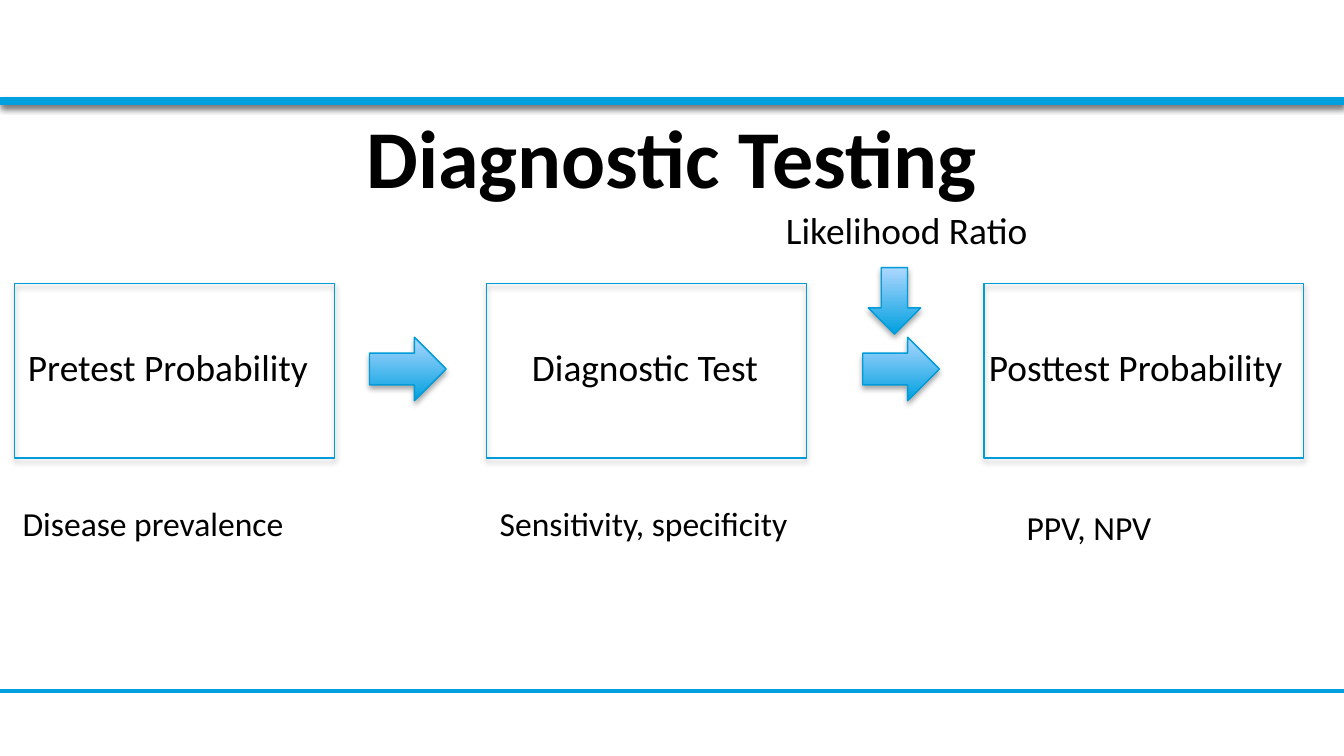
from lxml.etree import SubElement
from pptx import Presentation
from pptx.dml.color import RGBColor
from pptx.enum.shapes import MSO_CONNECTOR, MSO_SHAPE
from pptx.enum.text import MSO_ANCHOR, PP_ALIGN
from pptx.oxml.ns import qn
from pptx.util import Inches, Pt

BLACK = RGBColor(0, 0, 0)
WHITE = RGBColor(255, 255, 255)
BLUE = RGBColor(0x00, 0xA0, 0xDF)
EDGE = RGBColor(0x00, 0x9C, 0xDA)
PALE = RGBColor(0xAD, 0xD7, 0xFF)

deck = Presentation()
deck.slide_width, deck.slide_height = Inches(10), Inches(5.625)
slide = deck.slides.add_slide(deck.slide_layouts[6])
shapes = slide.shapes
col, row = deck.slide_width / 100, deck.slide_height / 100


def shade(shape, alpha, blur, drop):
    effect = SubElement(shape._element.spPr, qn("a:effectLst"))
    if alpha:
        cast = SubElement(effect, qn("a:outerShdw"), blurRad=str(Pt(blur)),
                          dist=str(Pt(drop)), dir="5400000", rotWithShape="0")
        tone = SubElement(cast, qn("a:srgbClr"), val=str(BLACK))
        SubElement(tone, qn("a:alpha"), val=str(alpha * 1000))


def write(text, x, y, w, h, size):
    label = shapes.add_textbox(int(x * col), int(y * row), int(w * col), int(h * row))
    frame = label.text_frame
    frame.word_wrap = True
    frame.text = text
    para = frame.paragraphs[0]
    para.font.name = "Calibri"
    para.font.size = Pt(size)
    para.font.color.rgb = BLACK
    return frame


band = shapes.add_shape(MSO_SHAPE.RECTANGLE, 0, 0, int(100 * col), int(13.69 * row))
band.fill.solid()
band.fill.fore_color.rgb = WHITE
band.line.fill.background()
shade(band, 35, 3.1, 1.8)

for y, width, alpha in [(91.38, 2, 0), (13.4, 4.5, 38)]:
    rule = shapes.add_connector(MSO_CONNECTOR.STRAIGHT, 0, int(y * row),
                                int(100 * col), int(y * row))
    rule.line.color.rgb = BLUE
    rule.line.width = Pt(width)
    shade(rule, alpha, 3.1, 1.6)

title = write("Diagnostic Testing", 5, 12.27, 90, 16.71, 44)
title.vertical_anchor = MSO_ANCHOR.MIDDLE
title.paragraphs[0].alignment = PP_ALIGN.CENTER
title.paragraphs[0].font.bold = True

for x in (1.1, 36.2, 73.2):
    box = shapes.add_shape(MSO_SHAPE.RECTANGLE, int(x * col), int(37.51 * row),
                           int(23.8 * col), int(23.11 * row))
    box.fill.background()
    box.line.color.rgb = EDGE
    box.line.width = Pt(0.75)
    shade(box, 35, 3.1, 1.8)

for kind, x, y, w, h in [
    (MSO_SHAPE.RIGHT_ARROW, 27.5, 44.62, 5.7, 8.4),
    (MSO_SHAPE.RIGHT_ARROW, 64.2, 44.62, 5.7, 8.4),
    (MSO_SHAPE.DOWN_ARROW, 64.6, 35.4, 3.9, 8.8),
]:
    arrow = shapes.add_shape(kind, int(x * col), int(y * row), int(w * col), int(h * row))
    arrow.fill.gradient()
    arrow.fill.gradient_angle = 90
    for stop, color in zip(arrow.fill.gradient_stops, (BLUE, PALE)):
        stop.color.rgb = color
    arrow.line.color.rgb = EDGE
    arrow.line.width = Pt(0.75)
    shade(arrow, 35, 3.1, 1.8)

for text, x, y, w in [
    ("Pretest Probability", 1.1, 44.62, 26),
    ("Diagnostic Test", 38.6, 44.62, 20.3),
    ("Posttest Probability", 72.6, 44.62, 25.6),
    ("Likelihood Ratio", 57.5, 26.49, 20.3),
]:
    write(text, x, y, w, 7.8, 20)

for text, x, y in [
    ("Disease prevalence", 0.7, 65.6),
    ("Sensitivity, specificity", 36.2, 65.6),
    ("PPV, NPV", 75.4, 66.13),
]:
    write(text, x, y, 24.6, 7.1, 18)

deck.save("out.pptx")
